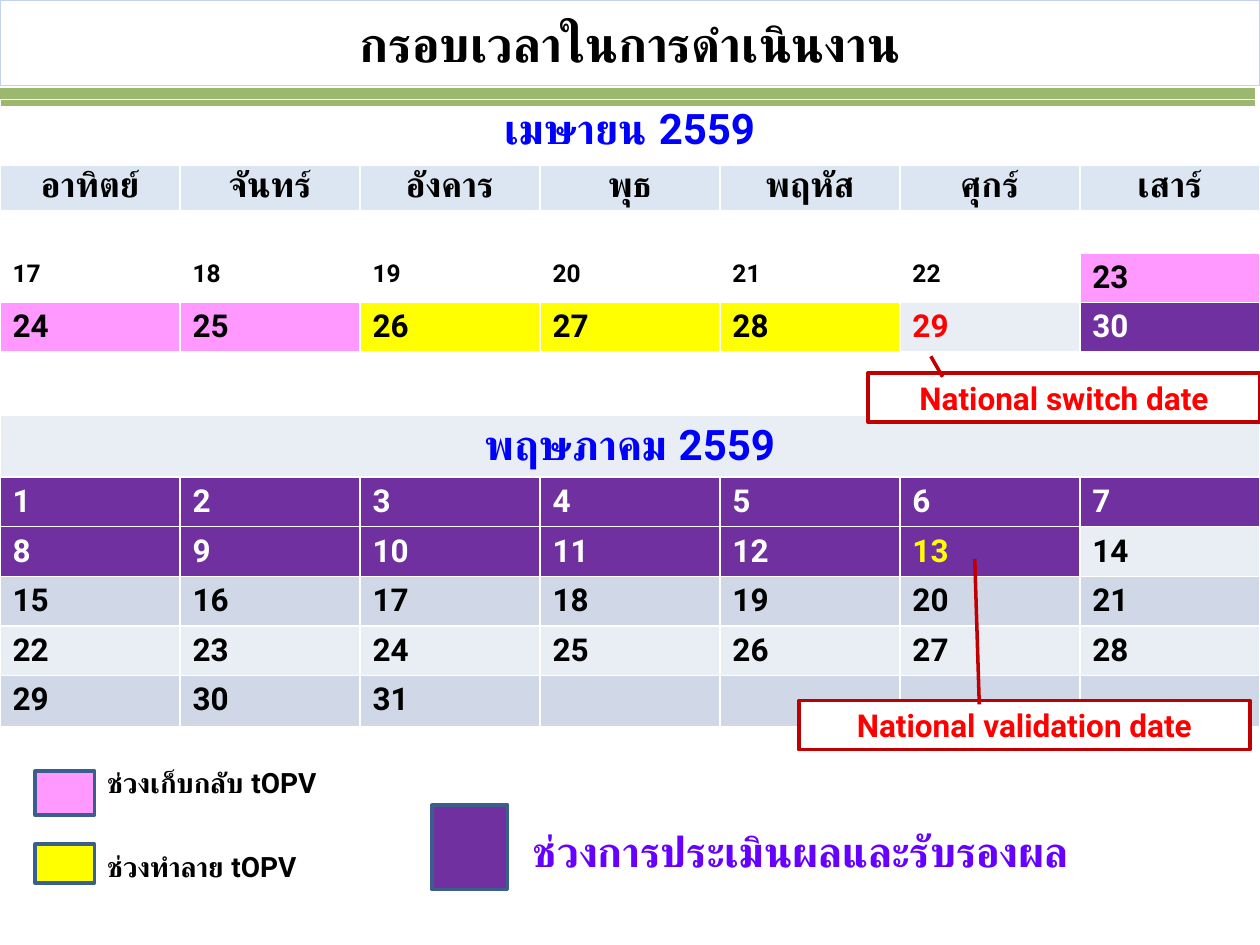
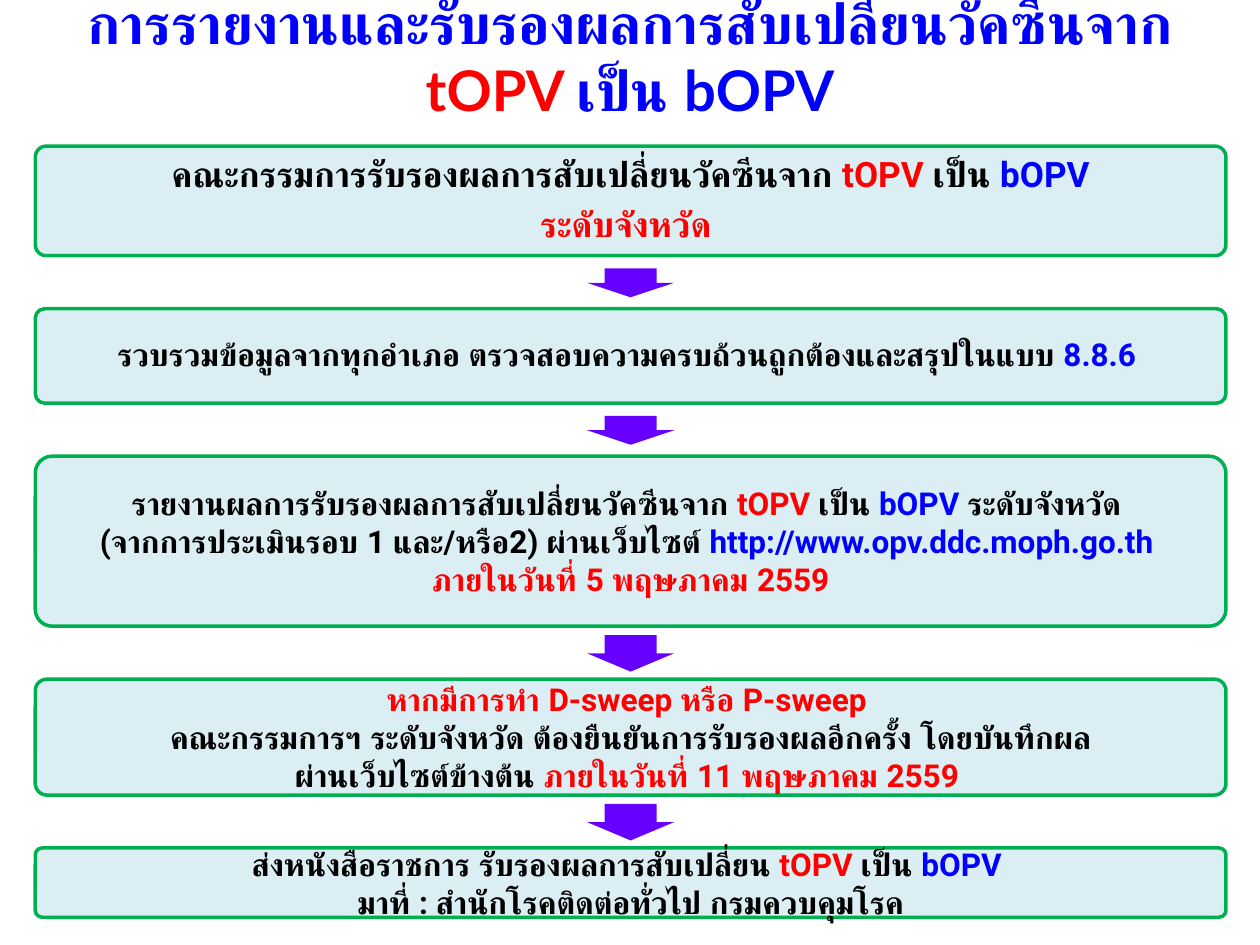
from dataclasses import dataclass
from typing import NamedTuple

from lxml.etree import SubElement
from pptx import Presentation
from pptx.dml.color import RGBColor as Rgb
from pptx.enum.shapes import MSO_CONNECTOR as Link, MSO_SHAPE as Kind
from pptx.enum.text import MSO_ANCHOR as Anchor, MSO_AUTO_SIZE as Fit, PP_ALIGN as Align
from pptx.oxml.ns import qn
from pptx.util import Emu, Pt

SCALE = 9144


@dataclass(frozen=True)
class Theme:
    font: str = "Roboto"
    head: str = "Lato"
    black: str = "000000"
    white: str = "FFFFFF"
    red: str = "FF0000"
    blue: str = "0000FF"
    violet: str = "6600FF"
    purple: str = "7030A0"
    pink: str = "FF99FF"
    yellow: str = "FFFF00"
    pale: str = "E9EDF4"
    band: str = "D0D8E8"
    week: str = "DCE6F2"
    rule: str = "9CB86E"
    frame: str = "C2D1ED"
    edge: str = "3A5F8C"
    crimson: str = "C00000"
    green: str = "00B050"
    aqua: str = "DBEEF4"
    banner: int = 32
    title: int = 28
    month: int = 24
    day: int = 20
    body: int = 18
    label: int = 16
    small: int = 14


T = Theme()


class Box(NamedTuple):
    left: int
    top: int
    width: int
    height: int


class Span(NamedTuple):
    text: str
    ink: str = T.black


class Phase(NamedTuple):
    first: int
    last: int
    fill: str | None
    ink: str = T.black
    size: int = T.body


class Legend(NamedTuple):
    swatch: Box
    fill: str
    label: Box
    text: Span
    size: int


class Callout(NamedTuple):
    box: Box
    text: str
    bends: tuple[float, ...]


class Step(NamedTuple):
    height: int
    lines: list[list[Span]]
    size: int = T.body
    leading: float = 1.0
    after: int = 0


APRIL = 30
MAY = 31
DAYS = ["อาทิตย์", "จันทร์", "อังคาร", "พุธ", "พฤหัส", "ศุกร์", "เสาร์"]
ROWS = [51, 37, 33, 39, 39, 50, 48] + [39] * 5
PHASES = [
    Phase(17, 22, None, size=T.small),
    Phase(23, 25, T.pink),
    Phase(26, 28, T.yellow),
    Phase(29, 29, T.pale, T.red),
    Phase(30, 42, T.purple, T.white),
    Phase(43, 43, T.purple, T.yellow),
    Phase(44, 44, T.pale),
    Phase(45, 51, T.band),
    Phase(52, 58, T.pale),
    Phase(59, 65, T.band),
]
LEGENDS = [
    Legend(Box(28, 612, 47, 35), T.pink, Box(75, 603, 228, 41),
           Span("ช่วงเก็บกลับ tOPV"), T.label),
    Legend(Box(28, 670, 47, 31), T.yellow, Box(75, 669, 205, 37),
           Span("ช่วงทำลาย tOPV"), T.label),
    Legend(Box(343, 639, 60, 67), T.purple, Box(413, 650, 520, 50),
           Span("ช่วงการประเมินผลและรับรองผล", T.violet), T.month),
]
CALLOUTS = [
    Callout(Box(689, 296, 311, 39), "National switch date", (0.08, 0.19, -0.34, 0.16)),
    Callout(Box(634, 556, 358, 39), "National validation date", (0.08, 0.4, -2.88, 0.39)),
]
OLD = Span("tOPV ", T.red)
TO = Span("เป็น ")
NEW = Span("bOPV", T.blue)
STEPS = [
    Step(87, [
        [Span("คณะกรรมการรับรองผลการสับเปลี่ยนวัคซีนจาก "), OLD, TO, NEW],
        [Span("ระดับจังหวัด ", T.red)],
    ], T.day, 0.9, 7),
    Step(75, [
        [Span("รวบรวมข้อมูลจากทุกอำเภอ ตรวจสอบความครบถ้วนถูกต้องและสรุปในแบบ "),
         Span("8.8.6 ", T.blue)],
    ], leading=0.9, after=6),
    Step(135, [
        [Span("รายงานผลการรับรองผลการสับเปลี่ยนวัคซีนจาก "), OLD, TO, NEW,
         Span(" ระดับจังหวัด ")],
        [Span("(จากการประเมินรอบ 1 และ/หรือ2) ผ่านเว็บไซต์ "),
         Span("http://www.opv.ddc.moph.go.th ", T.blue)],
        [Span("ภายในวันที่ 5 พฤษภาคม 2559", T.red)],
    ]),
    Step(92, [
        [Span("หากมีการทำ D-sweep หรือ P-sweep ", T.red)],
        [Span("คณะกรรมการฯ ระดับจังหวัด ต้องยืนยันการรับรองผลอีกครั้ง โดยบันทึกผล")],
        [Span("ผ่านเว็บไซต์ข้างต้น "), Span("ภายในวันที่ 11 พฤษภาคม 2559 ", T.red)],
    ]),
    Step(55, [
        [Span("ส่งหนังสือราชการ รับรองผลการสับเปลี่ยน "), OLD, TO, Span("bOPV ", T.blue)],
        [Span("มาที่ : สำนักโรคติดต่อทั่วไป กรมควบคุมโรค")],
    ]),
]


def px(count: int) -> Emu:
    return Emu(count * SCALE)


def place(box: Box) -> list[Emu]:
    return [px(side) for side in box]


def write(para, spans: list[Span], size: int, align=Align.CENTER, font: str = T.font) -> None:
    para.text = spans[0].text
    for span in spans[1:]:
        para.add_run().text = span.text
    para.alignment = align
    for run, span in zip(para.runs, spans):
        run.font.name = font
        run.font.size = Pt(size)
        run.font.bold = True
        run.font.color.rgb = Rgb.from_string(span.ink)


def draw(slide, kind, box: Box, fill: str, line: str | None = None):
    shape = slide.shapes.add_shape(kind, *place(box))
    shape.shadow.inherit = False
    shape.fill.solid()
    shape.fill.fore_color.rgb = Rgb.from_string(fill)
    if line:
        shape.line.color.rgb = Rgb.from_string(line)
        shape.line.width = Pt(2)
    else:
        shape.line.fill.background()
    return shape


def head(slide, box: Box, spans: list[Span], size: int, font: str):
    title = slide.shapes.title
    title.left, title.top, title.width, title.height = place(box)
    frame = title.text_frame
    frame.auto_size = Fit.NONE
    frame.vertical_anchor = Anchor.MIDDLE
    write(frame.paragraphs[0], spans, size, font=font)
    return title


def paint(cell, fill: str | None) -> None:
    if fill:
        cell.fill.solid()
        cell.fill.fore_color.rgb = Rgb.from_string(fill)
    else:
        cell.fill.background()


def border(cell, low: int) -> None:
    props = cell._tc.get_or_add_tcPr()
    for spot, (side, width) in enumerate([("L", 1), ("R", 1), ("T", 1), ("B", low)]):
        line = SubElement(props, qn(f"a:ln{side}"), w=str(Pt(width)))
        fill = SubElement(line, qn("a:solidFill"))
        SubElement(fill, qn("a:srgbClr"), val=T.white)
        props.insert(spot, line)


def calendar(slide) -> None:
    box = Box(0, 79, 1000, sum(ROWS))
    table = slide.shapes.add_table(len(ROWS), len(DAYS), *place(box)).table
    table.first_row = table.horz_banding = False
    for col in table.columns:
        col.width = px(box.width) // len(DAYS)
    for index, height in enumerate(ROWS):
        table.rows[index].height = px(height)
        for cell in table.rows[index].cells:
            paint(cell, None)
            border(cell, 1 if index else 3)
    for index in (0, 5, 6):
        table.cell(index, 0).merge(table.cell(index, len(DAYS) - 1))
    for index, name in ((0, "เมษายน 2559"), (6, "พฤษภาคม 2559")):
        cell = table.cell(index, 0)
        write(cell.text_frame.paragraphs[0], [Span(name, T.blue)], T.month)
    paint(table.cell(6, 0), T.pale)
    for col, name in enumerate(DAYS):
        cell = table.cell(1, col)
        paint(cell, T.week)
        cell.margin_top = cell.margin_bottom = 0
        cell.vertical_anchor = Anchor.MIDDLE
        write(cell.text_frame.paragraphs[0], [Span(name)], T.day)
        gap = table.cell(2, col).text_frame.paragraphs[0]
        SubElement(gap._p, qn("a:endParaRPr"), sz=str(T.small * 100))
    for phase in PHASES:
        for date in range(phase.first, phase.last + 1):
            week, col = divmod(date - PHASES[0].first, len(DAYS))
            cell = table.cell(week + (3 if date <= APRIL else 5), col)
            paint(cell, phase.fill)
            if date <= APRIL + MAY:
                day = date if date <= APRIL else date - APRIL
                write(cell.text_frame.paragraphs[0], [Span(str(day), phase.ink)],
                      phase.size, Align.LEFT)


def plan(slide) -> None:
    title = head(slide, Box(0, 0, 1000, 68), [Span("กรอบเวลาในการดำเนินงาน")],
                 T.title, T.font)
    title.line.color.rgb = Rgb.from_string(T.frame)
    title.line.width = Pt(0.75)
    rule = slide.shapes.add_connector(Link.STRAIGHT, px(-4), px(77), px(996), px(77))
    rule.line.color.rgb = Rgb.from_string(T.rule)
    rule.line.width = Pt(10.75)
    SubElement(rule._element.spPr, qn("a:effectLst"))
    calendar(slide)
    for item in LEGENDS:
        draw(slide, Kind.RECTANGLE, item.swatch, item.fill, T.edge)
        frame = slide.shapes.add_textbox(*place(item.label)).text_frame
        frame.word_wrap = True
        write(frame.paragraphs[0], [item.text], item.size, Align.LEFT)
    for note in CALLOUTS:
        shape = draw(slide, Kind.LINE_CALLOUT_1, note.box, T.white, T.crimson)
        for index, bend in enumerate(note.bends):
            shape.adjustments[index] = bend
        shape.text_frame.vertical_anchor = Anchor.MIDDLE
        write(shape.text_frame.paragraphs[0], [Span(note.text, T.red)], T.body)


def flow(slide) -> None:
    lead = Span("การรายงานและรับรองผลการสับเปลี่ยนวัคซีนจาก ", T.blue)
    head(slide, Box(0, -2, 1000, 92), [lead, OLD, Span("เป็น bOPV", T.blue)],
         T.banner, T.head)
    top, gap, wide = 116, 42, 69
    for index, step in enumerate(STEPS):
        if index:
            tall = 23 if index < 3 else 29
            spot = Box(500 - wide // 2, top - (gap + tall) // 2, wide, tall)
            arrow = draw(slide, Kind.DOWN_ARROW, spot, T.violet)
            arrow.adjustments[0] = 0.6
        shape = draw(slide, Kind.ROUNDED_RECTANGLE, Box(28, top, 945, step.height),
                     T.aqua, T.green)
        shape.adjustments[0] = 0.1
        frame = shape.text_frame
        frame.vertical_anchor = Anchor.MIDDLE
        frame.margin_left = frame.margin_right = px(7)
        frame.margin_top = frame.margin_bottom = px(7)
        for row, spans in enumerate(step.lines):
            para = frame.add_paragraph() if row else frame.paragraphs[0]
            write(para, spans, step.size)
            para.line_spacing = step.leading
            para.space_after = Pt(step.after)
        top += step.height + gap


def main() -> None:
    deck = Presentation()
    deck.slide_width, deck.slide_height = px(1000), px(750)
    for build in (plan, flow):
        build(deck.slides.add_slide(deck.slide_layouts[5]))
    deck.save("out.pptx")


if __name__ == "__main__":
    main()
